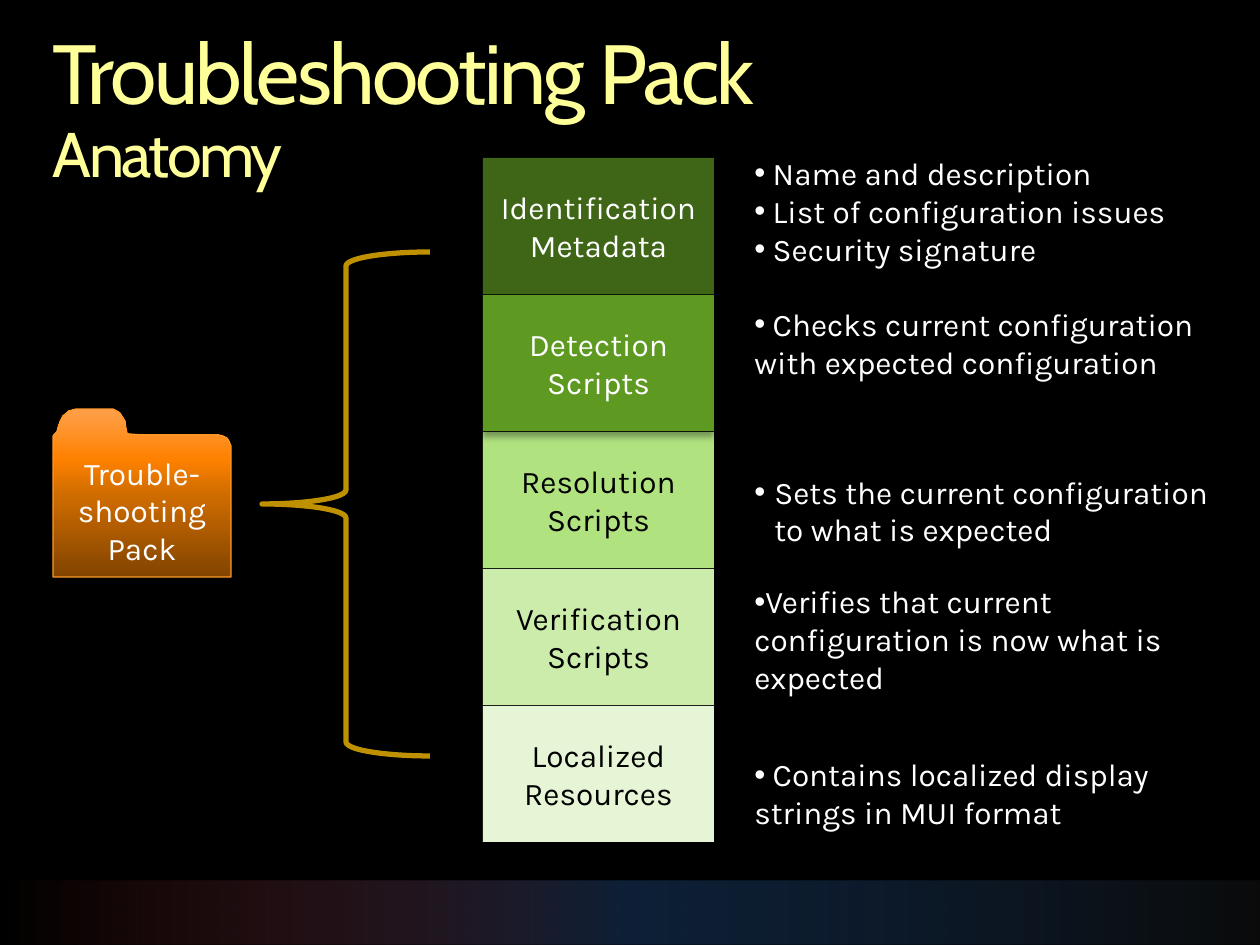
from lxml.etree import SubElement as Sub
from pptx import Presentation
from pptx.dml.color import RGBColor as RGB
from pptx.enum.shapes import MSO_SHAPE as Kind
from pptx.enum.text import MSO_ANCHOR as Anchor, PP_ALIGN as Align
from pptx.oxml.ns import qn
from pptx.util import Pt

PX = 7257
BLACK = RGB(0x00, 0x00, 0x00)
WHITE = RGB(0xFF, 0xFF, 0xFF)
CREAM = RGB(0xFF, 0xFF, 0xB9)
YELLOW = RGB(0xFF, 0xFF, 0x99)
AMBER = RGB(0xF6, 0xAE, 0x1E)
GOLD = RGB(0xBF, 0x90, 0x00)
PINE = RGB(0x3F, 0x66, 0x17)
GREEN = RGB(0x5E, 0x99, 0x22)
LIME = RGB(0xB1, 0xE2, 0x80)
MINT = RGB(0xCB, 0xEC, 0xAA)
PALE = RGB(0xE5, 0xF5, 0xD5)
BROWN = RGB(0x82, 0x44, 0x00)
RUST = RGB(0xD1, 0x6D, 0x00)
ORANGE = RGB(0xFE, 0x81, 0x00)
PEACH = RGB(0xFF, 0xA0, 0x4B)
EDGE = RGB(0xFF, 0x99, 0x29)
COAL = RGB(0x0D, 0x0D, 0x0D)
NAVY = RGB(0x17, 0x37, 0x5E)
RED = RGB(0xCE, 0x3B, 0x37)


def say(para, text, color=WHITE, size=18, face="Karla"):
    run = para.add_run()
    run.text = text
    run.font.name = face
    run.font.size = Pt(size)
    run.font.color.rgb = color
    return run


def grade(fill, props, angle, stops):
    fill.gradient()
    fill.gradient_angle = angle
    steps = props.find(qn("a:gradFill")).find(qn("a:gsLst"))
    for old in list(steps):
        steps.remove(old)
    for place, color, alpha in stops:
        stop = Sub(steps, qn("a:gs"), pos=str(place * 1000))
        tone = Sub(stop, qn("a:srgbClr"), val=str(color))
        if alpha < 100:
            Sub(tone, qn("a:alpha"), val=str(alpha * 1000))


deck = Presentation()
deck.slide_width = 1260 * PX
deck.slide_height = 945 * PX
slide = deck.slides.add_slide(deck.slide_layouts[6])
slide.background.fill.solid()
slide.background.fill.fore_color.rgb = BLACK
shapes = slide.shapes

band = shapes.add_shape(Kind.RECTANGLE, 0, 881 * PX, 1260 * PX, 64 * PX)
band.shadow.inherit = False
band.line.fill.background()
grade(band.fill, band._element.spPr, 180,
      [(0, COAL, 86), (50, NAVY, 58), (100, RED, 0)])

title = shapes.add_textbox(53 * PX, 32 * PX, 1155 * PX, 160 * PX)
frame = title.text_frame
frame.word_wrap = True
frame.margin_left = frame.margin_right = 0
frame.margin_top = frame.margin_bottom = 0
para = frame.paragraphs[0]
para.line_spacing = 0.9
head = say(para, "Troubleshooting Pack", YELLOW, 48, "Cabin")
para.add_line_break()
sub = say(para, "Anatomy", YELLOW, 36, "Cabin")
for run in (head, sub):
    run.font._element.set("spc", "-150")
grade(head.font.fill, head.font._element, 270,
      [(0, CREAM, 100), (36, YELLOW, 100), (86, AMBER, 100)])

parts = [
    (0, "Identification Metadata", PINE, WHITE),
    (2, "Resolution Scripts", LIME, BLACK),
    (3, "Verification Scripts", MINT, BLACK),
    (4, "Localized Resources", PALE, BLACK),
    (1, "Detection Scripts", GREEN, WHITE),
]
cast = []
for row, text, color, ink in parts:
    box = shapes.add_shape(Kind.RECTANGLE, 483 * PX, (158 + 137 * row) * PX,
                           231 * PX, 136 * PX)
    box.fill.solid()
    box.fill.fore_color.rgb = color
    box.line.fill.background()
    frame = box.text_frame
    frame.word_wrap = True
    frame.vertical_anchor = Anchor.MIDDLE
    frame.paragraphs[0].alignment = Align.CENTER
    say(frame.paragraphs[0], text, ink)
    cast.append(box)

rim = [(144, 435), (129, 434), (127, 433), (126, 428), (125, 421), (120, 413),
       (117, 411), (113, 409), (76, 409), (69, 411), (63, 416), (60, 422),
       (58, 428), (57, 432), (54, 435), (53, 436), (53, 577), (231, 577),
       (231, 450), (231, 446), (229, 441), (227, 438), (223, 436), (219, 435)]
pen = shapes.build_freeform(215, 435, scale=PX)
pen.add_line_segments(rim, close=True)
folder = pen.convert_to_shape()
grade(folder.fill, folder._element.spPr, 90,
      [(0, BROWN, 100), (50, RUST, 100), (70, ORANGE, 100), (100, PEACH, 100)])
folder.line.color.rgb = EDGE
folder.line.width = Pt(0.75)
frame = folder.text_frame
frame.word_wrap = True
frame.vertical_anchor = Anchor.BOTTOM
frame.margin_bottom = 10 * PX
frame.paragraphs[0].alignment = Align.CENTER
say(frame.paragraphs[0], "Trouble-shooting Pack")
cast.append(folder)

for shape in cast:
    shape.shadow.inherit = False
    glow = shape._element.spPr.find(qn("a:effectLst"))
    drop = Sub(glow, qn("a:outerShdw"), blurRad=str(Pt(4)), dist=str(Pt(3)),
               dir="5400000", rotWithShape="0")
    tone = Sub(drop, qn("a:srgbClr"), val=str(BLACK))
    Sub(tone, qn("a:alpha"), val="35000")

brace = shapes.add_shape(Kind.LEFT_BRACE, 262 * PX, 252 * PX, 168 * PX, 504 * PX)
brace.shadow.inherit = False
brace.fill.background()
brace.line.color.rgb = GOLD
brace.line.width = Pt(3)

notes = [
    (0, 0, [" Name and description"]),
    (0, 0, [" List of configuration issues"]),
    (0, 0, [" Security signature"]),
    (21.5, 0, [" Checks current configuration with expected configuration"]),
    (52.5, 20, ["Sets the current configuration", "to what is expected"]),
    (19.5, 0, ["Verifies that current configuration is now what is expected"]),
    (34, 0, [" Contains localized display strings in MUI format"]),
]
list_box = shapes.add_textbox(742 * PX, 148 * PX, 481 * PX, 695 * PX)
frame = list_box.text_frame
frame.word_wrap = True
for spot, (gap, hang, lines) in enumerate(notes):
    para = frame.paragraphs[0] if spot == 0 else frame.add_paragraph()
    props = para._p.get_or_add_pPr()
    props.set("marL", str(hang * PX))
    props.set("indent", str(-hang * PX))
    Sub(props, qn("a:buFont"), typeface="Arial")
    Sub(props, qn("a:buChar"), char="•")
    if gap:
        para.space_before = Pt(gap)
    for turn, line in enumerate(lines):
        if turn:
            para.add_line_break()
        say(para, line)

deck.save("out.pptx")
